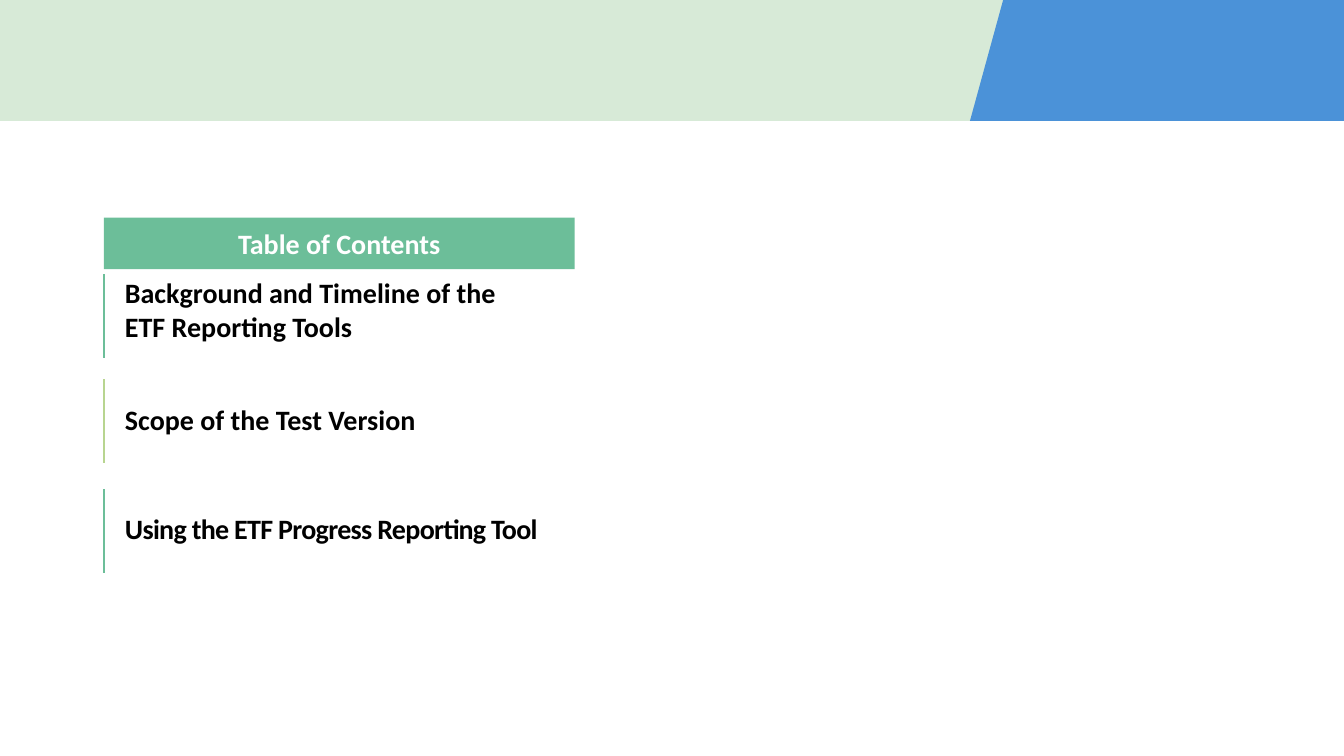
from pptx import Presentation
from pptx.dml.color import RGBColor
from pptx.enum.shapes import MSO_CONNECTOR, MSO_SHAPE
from pptx.enum.text import MSO_ANCHOR, PP_ALIGN
from pptx.oxml.ns import qn
from pptx.util import Inches, Pt
from lxml.etree import SubElement

THEME = {
    "mint": "D7EAD7", "blue": "4B92D8", "green": "6CBE99", "lime": "B8D590",
    "ink": "000000", "white": "FFFFFF",
    "font": "Calibri", "size": Pt(20), "rule": Pt(1.5),
}

deck = Presentation()
deck.slide_width, deck.slide_height = Inches(13.33), Inches(7.5)
page = deck.slides.add_slide(deck.slide_layouts[6])

# A grid of 100 columns by 100 rows
COLUMN, ROW = deck.slide_width / 100, deck.slide_height / 100


def place(*lengths):
    """Turn alternating columns and rows into slide lengths."""
    return [round(n * (ROW if i % 2 else COLUMN)) for i, n in enumerate(lengths)]


def write(box, text, color="ink", align=PP_ALIGN.LEFT, anchor=MSO_ANCHOR.BOTTOM, tracking=0):
    frame = box.text_frame
    frame.word_wrap = True
    frame.vertical_anchor = anchor
    frame.margin_left = frame.margin_top = frame.margin_right = 0
    frame.margin_bottom = 0 if anchor == MSO_ANCHOR.MIDDLE else Inches(0.05)
    para = frame.paragraphs[0]
    para.alignment = align
    span = para.add_run()
    span.text = text
    span.font.name, span.font.size, span.font.bold = THEME["font"], THEME["size"], True
    span.font.color.rgb = RGBColor.from_string(THEME[color])
    if tracking:
        span._r.get_or_add_rPr().set("spc", str(tracking))


# Banner, its slanted end, and the heading bar
banner = page.shapes.add_shape(MSO_SHAPE.RECTANGLE, *place(0, 0, 100, 16))
outline = page.shapes.build_freeform(*place(74.64, 0))
outline.add_line_segments([place(*point) for point in ((100, 0), (100, 16), (72.17, 16))])
slant = outline.convert_to_shape()
heading = page.shapes.add_shape(MSO_SHAPE.RECTANGLE, *place(7.73, 28.8, 35.03, 6.8))
for shape, color in ((banner, "mint"), (slant, "blue"), (heading, "green")):
    shape.fill.solid()
    shape.fill.fore_color.rgb = RGBColor.from_string(THEME[color])
    shape.line.fill.background()
    shape.shadow.inherit = False
write(heading, "Table of Contents", color="white", align=PP_ALIGN.CENTER,
      anchor=MSO_ANCHOR.MIDDLE)

# Contents: text, text top, width, height, rule top, rule colour, tracking
entries = [
    ("Background and Timeline of the ETF Reporting Tools", 36.4, 28.5, 9.6, 36.27, "green", 0),
    ("Scope of the Test Version", 53.2, 28.5, 5.2, 50.13, "lime", 0),
    ("Using the ETF Progress Reporting Tool", 67.6, 32.7, 5.2, 64.67, "green", -50),
]
for text, top, width, height, rule_top, color, tracking in entries:
    box = page.shapes.add_textbox(*place(9.3, top, width, height))
    write(box, text, tracking=tracking)
    rule = page.shapes.add_connector(
        MSO_CONNECTOR.STRAIGHT, *place(7.73, rule_top + 11.07, 7.73, rule_top))
    rule.line.color.rgb = RGBColor.from_string(THEME[color])
    rule.line.width = THEME["rule"]
    SubElement(rule._element.spPr, qn("a:effectLst"))

deck.save("out.pptx")
